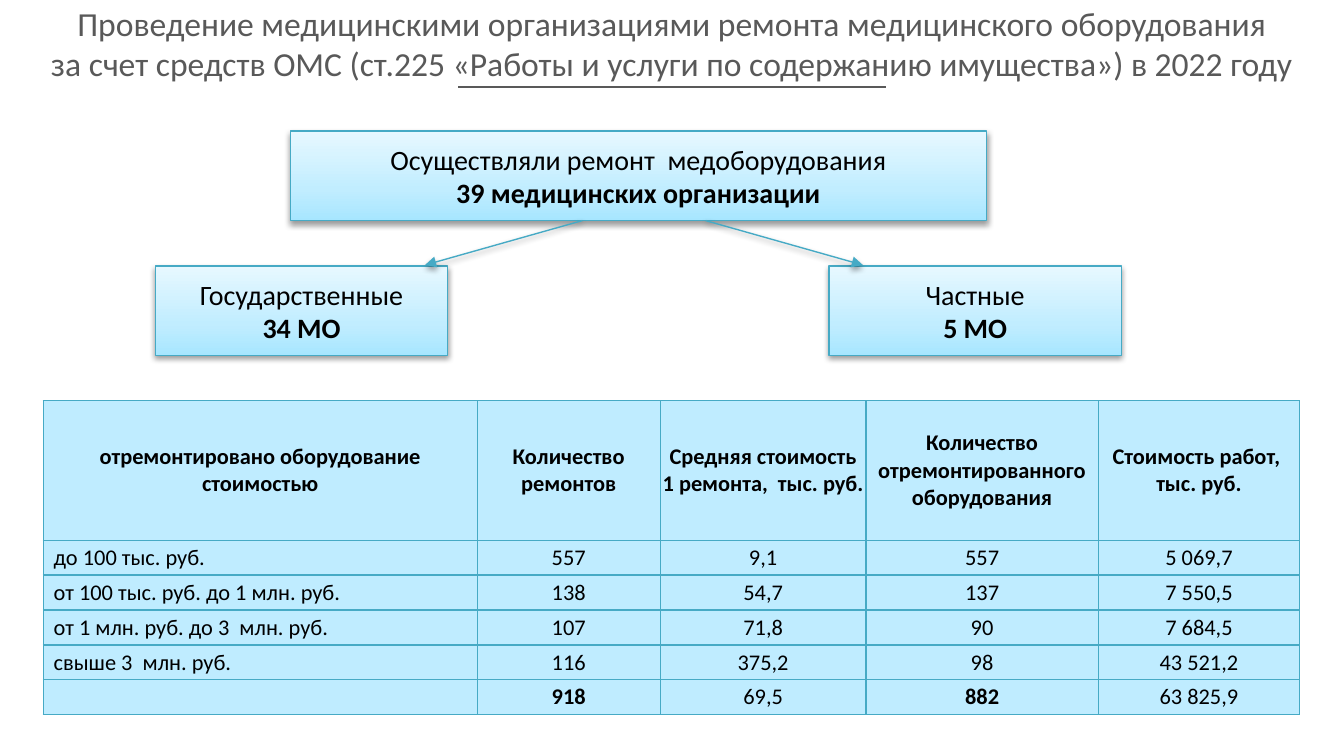
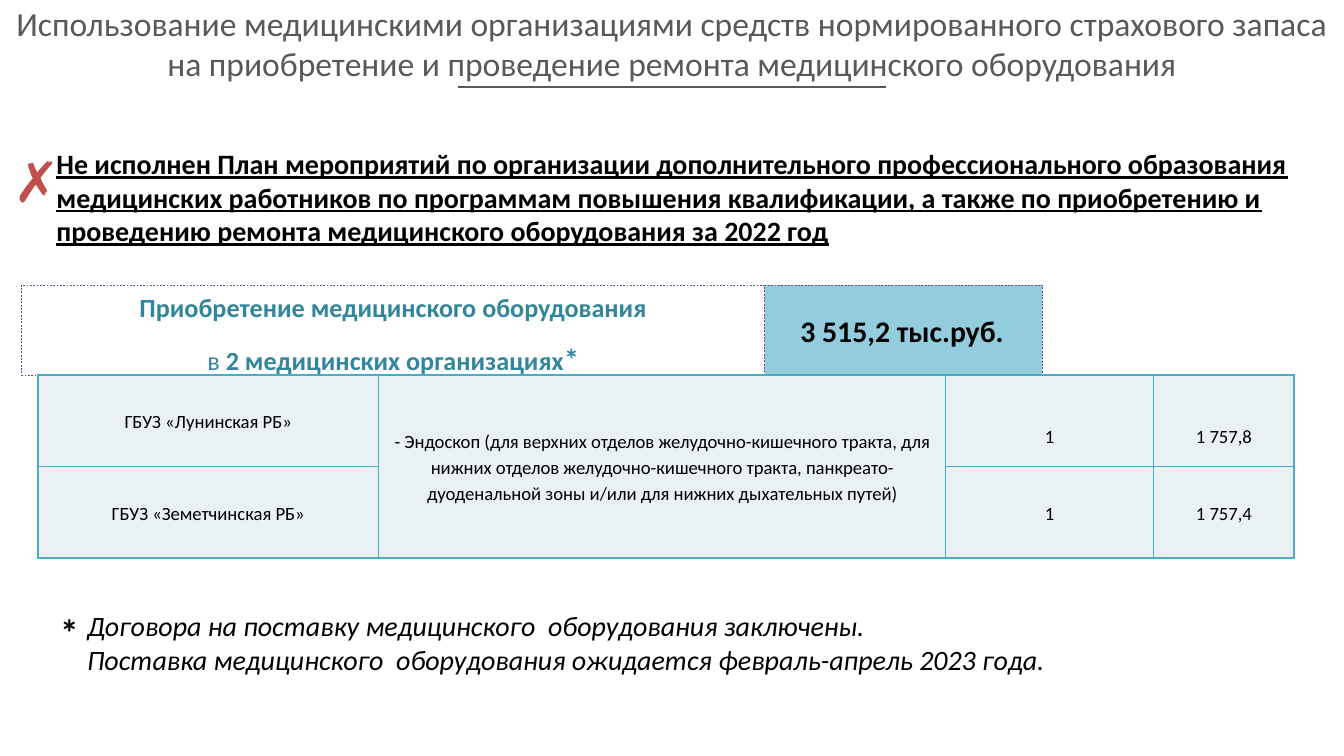
"""Build two slides on the repair and purchase of medical equipment."""
import copy
from dataclasses import dataclass, replace
from typing import Any, NamedTuple

import pptx
import pptx.dml.color
import pptx.enum.dml
import pptx.enum.shapes
import pptx.enum.text
import pptx.oxml
import pptx.oxml.ns
import pptx.util

Pt = pptx.util.Pt
Align = pptx.enum.text.PP_ALIGN
Anchor = pptx.enum.text.MSO_ANCHOR
Fit = pptx.enum.text.MSO_AUTO_SIZE


@dataclass(frozen=True)
class Ink:
    size: float
    color: str = "000000"
    bold: bool = False
    italic: bool = False
    underline: bool = False


@dataclass(frozen=True)
class Theme:
    font: str = "Calibri"
    grey: str = "595959"
    edge: str = "46AAC5"
    sky: str = "BFECFF"
    shade: tuple = ((0, "A7E6FF"), (0.35, "C1EDFF"), (1, "E7F8FF"))
    white: str = "FFFFFF"
    aqua: str = "93CDDD"
    plum: str = "604A7B"
    pale: str = "E9F1F5"
    frame: str = "4BACC6"
    title: Ink = Ink(18, "595959")
    text: Ink = Ink(15)
    head: Ink = Ink(15, bold=True)
    alert: Ink = Ink(15, bold=True, underline=True)
    note: Ink = Ink(15, italic=True)
    cell: Ink = Ink(12)
    small: Ink = Ink(10)
    sum: Ink = Ink(16, bold=True)
    teal: Ink = Ink(14, "31859C", bold=True)
    cross: Ink = Ink(30, "C0504D", bold=True)
    star: Ink = Ink(20, bold=True)


class Spot(NamedTuple):
    left: float
    top: float
    width: float
    height: float


class Run(NamedTuple):
    text: str
    ink: Ink


class Line(NamedTuple):
    runs: tuple[Run, ...]
    space: float | None = None


class Grid(NamedTuple):
    left: float
    top: float
    cols: tuple[float, ...]
    rows: tuple[float, ...]
    fill: str
    edge: str
    weight: float
    side: float
    space: float | None = None


THEME = Theme()
SHADOW = ('<a:outerShdw %s blurRad="40000" dist="20000" dir="5400000" rotWithShape="0">'
          '<a:srgbClr val="000000"><a:alpha val="38000"/></a:srgbClr></a:outerShdw>')


def rgb(code: str) -> Any:
    return pptx.dml.color.RGBColor.from_string(code)


def make(text: str) -> Any:
    return pptx.oxml.parse_xml(text % pptx.oxml.ns.nsdecls("a"))


def put(item: Any, form: dict[str, Any]) -> None:
    for key, val in form.items():
        setattr(item, key, val)


def say(text: str, ink: Ink, space: float | None = None) -> list[Line]:
    return [Line((Run(part, ink),), space) for part in text.split("\n")]


def write(frame: Any, lines: list[Line], align: Any = Align.CENTER) -> None:
    for num, line in enumerate(lines):
        para = frame.add_paragraph() if num else frame.paragraphs[0]
        put(para, {"alignment": align, "line_spacing": line.space})
        for text, ink in line.runs:
            run = para.add_run()
            run.text = text
            put(run.font, {"name": THEME.font, "size": Pt(ink.size), "bold": ink.bold,
                           "italic": ink.italic, "underline": ink.underline})
            run.font.color.rgb = rgb(ink.color)


def stroke(line: Any, color: str, weight: float, dash: Any = None) -> None:
    line.color.rgb = rgb(color)
    put(line, {"width": Pt(weight), "dash_style": dash})


def link(slide: Any, start: tuple, end: tuple, color: str, weight: float,
         arrow: bool = False) -> None:
    kind = pptx.enum.shapes.MSO_CONNECTOR.STRAIGHT
    item = slide.shapes.add_connector(kind, *map(Pt, start + end))
    stroke(item.line, color, weight)
    glow = make("<a:effectLst %s/>")
    item._element.spPr.append(glow)
    if arrow:
        item.line._get_or_add_ln().append(make('<a:tailEnd %s type="triangle"/>'))
        glow.append(make(SHADOW))


def start(deck: Any, title: str) -> Any:
    slide = deck.slides.add_slide(deck.slide_layouts[5])
    head = slide.shapes.title
    put(head, {"left": 0, "top": 0, "width": deck.slide_width, "height": Pt(46)})
    put(head.text_frame, {"margin_left": Pt(6.5), "margin_right": Pt(6.5),
                          "margin_top": Pt(3), "margin_bottom": Pt(3),
                          "vertical_anchor": Anchor.MIDDLE, "word_wrap": True,
                          "auto_size": Fit.NONE})
    write(head.text_frame, say(title, THEME.title))
    link(slide, (245.5, 46.8), (474.5, 46.8), THEME.grey, 1)
    return slide


def box(slide: Any, spot: Spot, lines: list[Line], anchor: Any = Anchor.MIDDLE) -> Any:
    kind = pptx.enum.shapes.MSO_SHAPE.RECTANGLE
    item = slide.shapes.add_shape(kind, *map(Pt, spot))
    item.shadow.inherit = False
    put(item.text_frame, {"word_wrap": True, "vertical_anchor": anchor})
    write(item.text_frame, lines)
    return item


def card(slide: Any, spot: Spot, label: str, count: str) -> None:
    item = box(slide, spot, say(label, THEME.text) + say(count, THEME.head))
    stroke(item.line, THEME.edge, 0.75)
    item.fill.gradient()
    item.fill.gradient_angle = 90
    stops = item._element.spPr.xpath(".//a:gsLst")[0]
    stops.append(copy.deepcopy(stops[0]))
    for stop, (place, color) in zip(item.fill.gradient_stops, THEME.shade):
        stop.position = place
        stop.color.rgb = rgb(color)
    item._element.spPr.xpath("./a:effectLst")[0].append(make(SHADOW))


def flat(slide: Any, spot: Spot, lines: list[Line], fill: str, anchor: Any) -> None:
    item = box(slide, spot, lines, anchor)
    item.fill.solid()
    item.fill.fore_color.rgb = rgb(fill)
    stroke(item.line, THEME.plum, 0.25, pptx.enum.dml.MSO_LINE.DASH)


def note(slide: Any, spot: Spot, text: str, ink: Ink, wrap: bool = True) -> None:
    frame = slide.shapes.add_textbox(*map(Pt, spot)).text_frame
    put(frame, {"word_wrap": wrap, "auto_size": Fit.SHAPE_TO_FIT_TEXT})
    write(frame, say(text, ink), Align.LEFT)


def rim(cell: Any, color: str, weight: float) -> None:
    for side in "LRTB":
        cell._tc.get_or_add_tcPr().append(make(
            f'<a:ln{side} %s w="{Pt(weight)}"><a:solidFill><a:srgbClr val="{color}"/>'
            f'</a:solidFill></a:ln{side}>'))


def chart(slide: Any, grid: Grid) -> Any:
    item = slide.shapes.add_table(len(grid.rows), len(grid.cols), Pt(grid.left), Pt(grid.top),
                                  Pt(sum(grid.cols)), Pt(sum(grid.rows)))
    table = item.table
    put(table, {"first_row": False, "horz_banding": False})
    for col, width in zip(table.columns, grid.cols):
        col.width = Pt(width)
    for row, height in zip(table.rows, grid.rows):
        row.height = Pt(height)
    for cell in table.iter_cells():
        put(cell, {"margin_left": Pt(grid.side), "margin_right": Pt(grid.side),
                   "margin_top": 0, "margin_bottom": 0, "vertical_anchor": Anchor.MIDDLE})
        rim(cell, grid.edge, grid.weight)
        cell.fill.solid()
        cell.fill.fore_color.rgb = rgb(grid.fill)
    return table


def enter(cell: Any, text: str, ink: Ink, grid: Grid, align: Any = Align.CENTER) -> None:
    if text:
        write(cell.text_frame, say(text, ink, grid.space), align)
    else:
        tail = cell.text_frame.paragraphs[0]._p.get_or_add_endParaRPr()
        tail.set("sz", str(ink.size * 100))


def repair(deck: Any) -> None:
    slide = start(deck, "Проведение медицинскими организациями ремонта медицинского оборудования\n"
                        "за счет средств ОМС (ст.225 «Работы и услуги по содержанию имущества») "
                        "в 2022 году")
    card(slide, Spot(155.5, 70.2, 373, 48), "Осуществляли ремонт  медоборудования",
         "39 медицинских организации")
    for left, label, count in ((83.3, "Государственные", "34 МО"), (444.2, "Частные", "5 МО")):
        card(slide, Spot(left, 142.4, 156.5, 48), label, count)
    for way in (-1, 1):
        link(slide, (345 + way * 33, 118.2), (345 + way * 117.3, 142), THEME.edge, 0.75, True)
    data = (
        ("отремонтировано оборудование стоимостью", "Количество ремонтов",
         "Средняя стоимость\n1 ремонта,  тыс. руб.", "Количество отремонтированного оборудования",
         "Стоимость работ,  тыс. руб."),
        ("до 100 тыс. руб.", "557", "9,1", "557", "5 069,7"),
        ("от 100 тыс. руб. до 1 млн. руб.", "138", "54,7", "137", "7 550,5"),
        ("от 1 млн. руб. до 3  млн. руб.", "107", "71,8", "90", "7 684,5"),
        ("свыше 3  млн. руб.", "116", "375,2", "98", "43 521,2"),
        ("", "918", "69,5", "882", "63 825,9"))
    last = len(data) - 1
    grid = Grid(23.2, 214.6, (232.5, 98, 110.3, 124.3, 108.1), (74.8,) + (18.72,) * last,
                THEME.sky, THEME.edge, 0.75, 0)
    table = chart(slide, grid)
    for row, texts in enumerate(data):
        for col, text in enumerate(texts):
            cell = table.cell(row, col)
            bold = row == 0 or (row == last and col in (1, 3))
            name = row > 0 and col == 0
            if name:
                cell.margin_left = Pt(5.6)
            enter(cell, text, replace(THEME.cell, bold=bold), grid,
                  Align.LEFT if name else Align.CENTER)


def supply(deck: Any) -> None:
    slide = start(deck, "Использование медицинскими организациями средств нормированного "
                        "страхового запаса на приобретение и проведение ремонта "
                        "медицинского оборудования")
    note(slide, Spot(23.2, 75, 696.8, 62), "Не исполнен План мероприятий по организации "
         "дополнительного профессионального образования медицинских работников по программам "
         "повышения квалификации, а также по приобретению и проведению ремонта "
         "медицинского оборудования за 2022 год", THEME.alert)
    flat(slide, Spot(408, 152.8, 150.5, 48.2), say("3 515,2 тыс.руб.", THEME.sum),
         THEME.aqua, Anchor.MIDDLE)
    teal = THEME.teal
    lines = say("Приобретение медицинского оборудования", teal)
    lines.append(Line((Run("в ", replace(teal, bold=False)),
                       Run("2 медицинских организациях", teal),
                       Run("*", replace(teal, size=16))), 1.5))
    flat(slide, Spot(11.5, 152.8, 398.2, 48.2), lines, THEME.white, Anchor.TOP)
    note(slide, Spot(0, 75, 34, 44), "✗", THEME.cross, False)
    grid = Grid(20.2, 201, (182.6, 303.8, 111.4, 75.4), (49, 49),
                THEME.pale, THEME.frame, 1, 3.6, 1.15)
    table = chart(slide, grid)
    table.cell(0, 1).merge(table.cell(1, 1))
    enter(table.cell(0, 1), "- Эндоскоп (для верхних отделов желудочно-кишечного тракта, "
          "для нижних отделов желудочно-кишечного тракта, панкреато-дуоденальной зоны "
          "и/или для нижних дыхательных путей)", THEME.small, grid)
    data = (("ГБУЗ «Лунинская РБ»", "1", "1 757,8"), ("ГБУЗ «Земетчинская РБ»", "1", "1 757,4"))
    for row, texts in enumerate(data):
        for col, text in zip((0, 2, 3), texts):
            enter(table.cell(row, col), text, THEME.small, grid)
    for col in (2, 3):
        table.cell(0, col).margin_top = Pt(16)
    note(slide, Spot(25.2, 322.6, 24.5, 31.5), "*", THEME.star, False)
    note(slide, Spot(39.6, 322.6, 645, 44), "Договора на поставку медицинского  оборудования "
         "заключены.\nПоставка медицинского  оборудования ожидается февраль-апрель 2023 года.",
         THEME.note)


def main() -> None:
    deck = pptx.Presentation()
    put(deck, {"slide_width": Pt(720), "slide_height": Pt(405)})
    repair(deck)
    supply(deck)
    deck.save("out.pptx")


if __name__ == "__main__":
    main()
